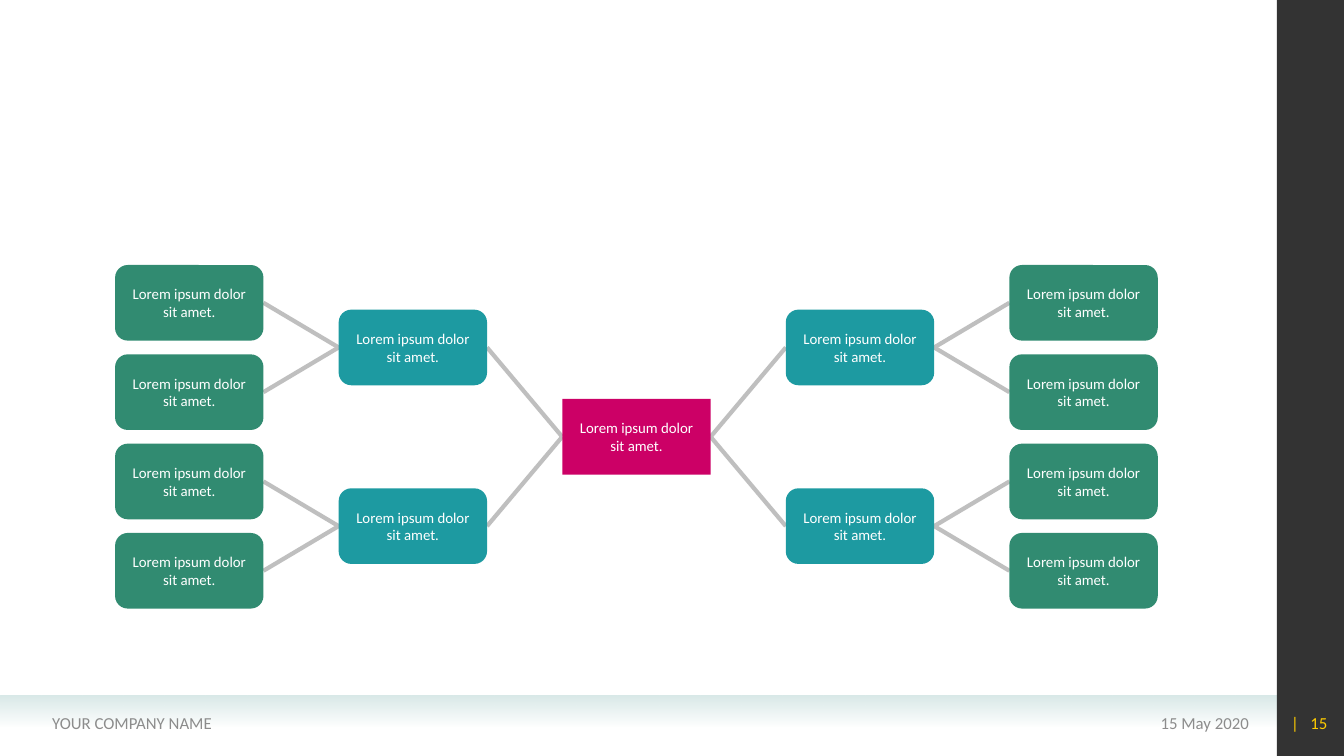
"""Build a slide with a two-sided hierarchy around one central card."""

from dataclasses import dataclass

from lxml import etree
from pptx import Presentation
from pptx.dml.color import RGBColor
from pptx.enum.shapes import MSO_CONNECTOR, MSO_SHAPE
from pptx.enum.text import MSO_ANCHOR, PP_ALIGN
from pptx.oxml.ns import qn
from pptx.shapes.autoshape import Shape
from pptx.slide import Slide
from pptx.util import Pt

STRAIGHT = MSO_CONNECTOR.STRAIGHT
RECTANGLE = MSO_SHAPE.RECTANGLE
ROUNDED = MSO_SHAPE.ROUNDED_RECTANGLE
MIDDLE = MSO_ANCHOR.MIDDLE
LEFT, CENTER, RIGHT = PP_ALIGN.LEFT, PP_ALIGN.CENTER, PP_ALIGN.RIGHT

COLORS = {
    "root": "CC0066",
    "branch": "1D9AA1",
    "leaf": "318B71",
    "link": "BFBFBF",
    "band": "D9E9E8",
    "sidebar": "000000",
    "footer": "8C8C8C",
    "page": "FFCC00",
    "card text": "FFFFFF",
}
FONT = "Calibri"
CARD_TEXT = "Lorem ipsum dolor sit amet."
CARD_WIDTH, CARD_HEIGHT = 106, 54
FIRST_LEFT, COLUMN_STEP = 82.2, 159.7
FIRST_TOP, ROW_STEP = 189.3, 63.8
LEFT_SIDE, RIGHT_SIDE = 1, 3
FOOTER_TOP, FOOTER_HEIGHT = 501.8, 28.8


@dataclass(frozen=True)
class Card:
    """A card of the hierarchy, placed by grid column and row."""

    column: int
    row: float
    color: str
    corner: float = 0.1667


@dataclass(frozen=True)
class FooterLabel:
    """A line of text in the footer."""

    text: str
    left: float
    width: float
    color: str = "footer"
    align: PP_ALIGN = LEFT
    inset: float = 7.2
    tab: float = 0


ROOT = Card(2, 1.5, "root", 0)
BRANCHES = [Card(column, row, "branch") for column in (1, 3) for row in (0.5, 2.5)]
LEAVES = {
    branch: [
        Card(0 if branch.column == 1 else 4, branch.row + offset, "leaf")
        for offset in (-0.5, 0.5)
    ]
    for branch in BRANCHES
}
FOOTER_LABELS = [
    FooterLabel("15 May 2020", 655.2, 244, align=RIGHT),
    FooterLabel("YOUR COMPANY NAME", 30.2, 352.8),
    FooterLabel("|\t15", 907.2, 48.2, "page", inset=15, tab=13.9),
]


def rgb(name: str) -> RGBColor:
    """Return the named colour."""
    return RGBColor.from_string(COLORS[name])


def write_text(shape: Shape, text: str, *, size: float, color: str,
               align: PP_ALIGN, inset: float, tab: float = 0) -> None:
    """Write one formatted, vertically centred paragraph into a shape."""
    frame = shape.text_frame
    frame.word_wrap = True
    frame.vertical_anchor = MIDDLE
    frame.margin_left = Pt(inset)
    frame.margin_right = Pt(min(inset, 7.2))
    frame.margin_top = frame.margin_bottom = Pt(1.5)
    paragraph = frame.paragraphs[0]
    paragraph.alignment = align
    run = paragraph.add_run()
    run.text = text
    run.font.name = FONT
    run.font.size = Pt(size)
    run.font.color.rgb = rgb(color)
    if tab:
        properties = shape.element.find(".//" + qn("a:pPr"))
        tab_list = etree.SubElement(properties, qn("a:tabLst"))
        etree.SubElement(tab_list, qn("a:tab"), pos=str(Pt(tab)), algn="l")


def add_block(slide: Slide, kind: MSO_SHAPE, left: float, top: float,
              width: float, height: float, color: str) -> Shape:
    """Add a filled shape without outline or shadow."""
    shape = slide.shapes.add_shape(kind, Pt(left), Pt(top), Pt(width), Pt(height))
    shape.shadow.inherit = False
    shape.fill.solid()
    shape.fill.fore_color.rgb = rgb(color)
    shape.line.fill.background()
    return shape


def set_last_alpha(shape: Shape, percent: int) -> None:
    """Set the opacity of the last fill colour of a shape."""
    color = shape.element.findall(".//" + qn("a:srgbClr"))[-1]
    etree.SubElement(color, qn("a:alpha"), val=str(percent * 1000))


def add_frame(slide: Slide) -> None:
    """Add the footer band, the sidebar and the footer labels."""
    band = add_block(slide, RECTANGLE, 0, 496.8, 912, 22.3, "band")
    band.fill.gradient()
    band.fill.gradient_angle = 270
    for stop in band.fill.gradient_stops:
        stop.color.rgb = rgb("band")
    set_last_alpha(band, 0)
    sidebar = add_block(slide, RECTANGLE, 912, 0, 48, 540, "sidebar")
    set_last_alpha(sidebar, 80)
    for label in FOOTER_LABELS:
        box = slide.shapes.add_textbox(
            Pt(label.left), Pt(FOOTER_TOP), Pt(label.width), Pt(FOOTER_HEIGHT))
        write_text(box, label.text, size=12, color=label.color,
                   align=label.align, inset=label.inset, tab=label.tab)


def add_card(slide: Slide, card: Card) -> Shape:
    """Add a card with its text."""
    shape = add_block(
        slide, ROUNDED, FIRST_LEFT + card.column * COLUMN_STEP,
        FIRST_TOP + card.row * ROW_STEP, CARD_WIDTH, CARD_HEIGHT, card.color)
    shape.adjustments[0] = card.corner
    write_text(shape, CARD_TEXT, size=10.6, color="card text", align=CENTER, inset=7)
    return shape


def add_link(slide: Slide, first: Shape, second: Shape, front: Shape) -> None:
    """Join the facing sides of two cards with a line behind the front shape."""
    start, end = sorted((first, second), key=lambda shape: shape.left)
    connector = slide.shapes.add_connector(STRAIGHT, 0, 0, 0, 0)
    connector.begin_connect(start, RIGHT_SIDE)
    connector.end_connect(end, LEFT_SIDE)
    connector.line.color.rgb = rgb("link")
    connector.line.width = Pt(3)
    properties = connector.element.find(qn("p:spPr"))
    etree.SubElement(properties, qn("a:effectLst"))
    front.element.addprevious(connector.element)


def add_hierarchy(slide: Slide) -> None:
    """Add the cards and the links between them."""
    root = add_card(slide, ROOT)
    for branch_card, leaf_cards in LEAVES.items():
        branch = add_card(slide, branch_card)
        add_link(slide, root, branch, root)
        for leaf_card in leaf_cards:
            add_link(slide, branch, add_card(slide, leaf_card), root)


def main() -> None:
    """Build and save the presentation."""
    presentation = Presentation()
    presentation.slide_width, presentation.slide_height = Pt(960), Pt(540)
    slide = presentation.slides.add_slide(presentation.slide_layouts[6])
    add_frame(slide)
    add_hierarchy(slide)
    presentation.save("out.pptx")


if __name__ == "__main__":
    main()
